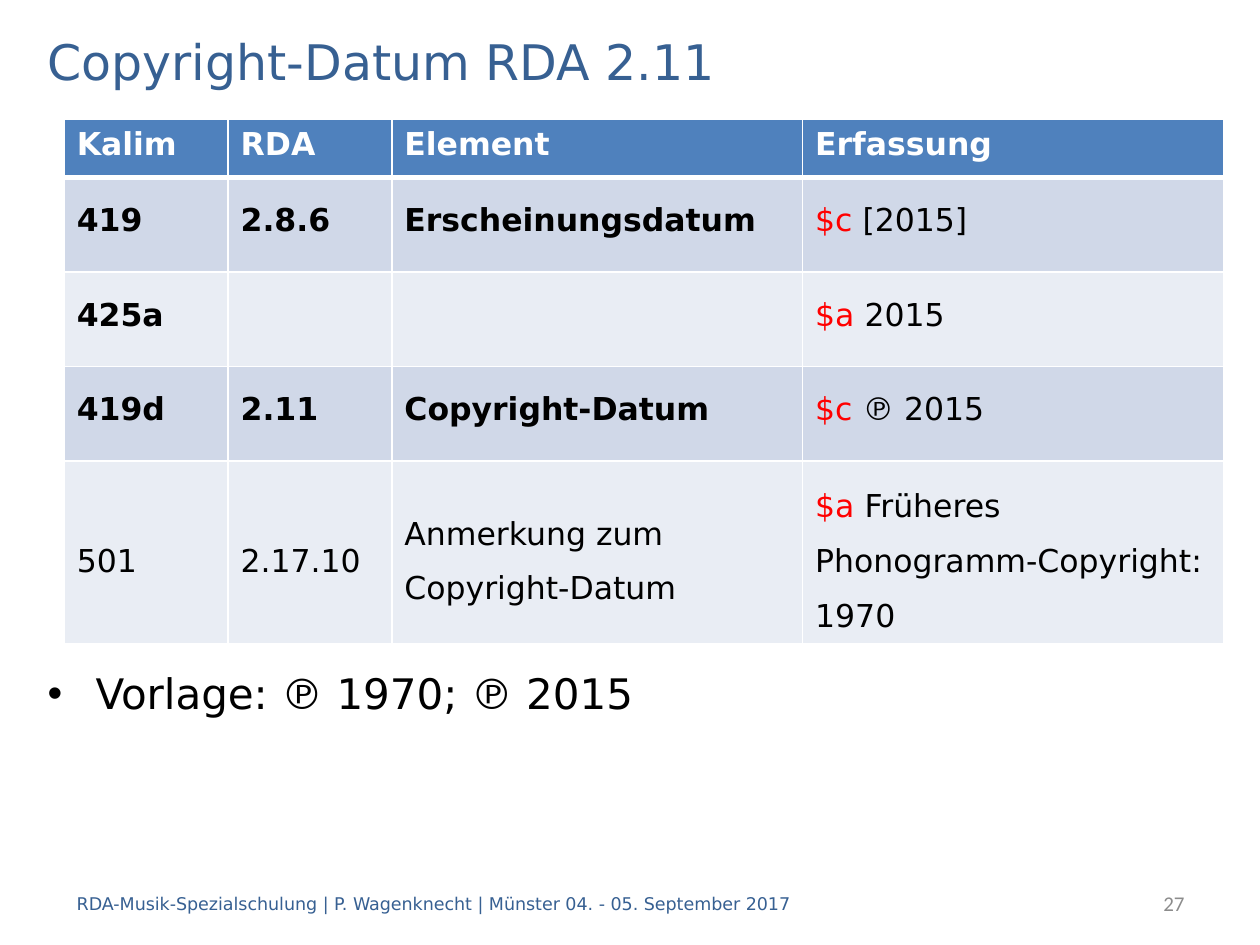
from dataclasses import dataclass

from lxml.etree import SubElement
from pptx import Presentation
from pptx.dml.color import RGBColor as Color
from pptx.enum.text import MSO_ANCHOR as Anchor, PP_ALIGN as Align
from pptx.oxml.ns import qn
from pptx.util import Inches, Pt


@dataclass(frozen=True)
class Theme:
    font: str = "DejaVu Sans"
    number_font: str = "Calibri"
    title_size: int = 28
    body_size: int = 24
    table_size: int = 18
    number_size: int = 12
    footer_size: int = 10
    heading: str = "376092"
    text: str = "000000"
    subfield: str = "FF0000"
    number: str = "8C8C8C"
    white: str = "FFFFFF"
    header_fill: str = "4F81BD"
    band_fills: tuple = ("D0D8E8", "E9EDF4")


THEME = Theme()


@dataclass(frozen=True)
class Label:
    text: str
    left: float
    top: float
    width: float
    height: float
    size: int
    color: str
    font: str = THEME.font
    align: Align = Align.LEFT
    anchor: Anchor = Anchor.MIDDLE
    bullet: bool = False


@dataclass(frozen=True)
class Field:
    tag: str
    rda: str
    element: str
    code: str
    value: str
    bold: bool = True
    spacing: object = Pt(16)


TITLE = Label("Copyright-Datum RDA 2.11", 0.28, 0.2, 9.45, 0.56,
              THEME.title_size, THEME.heading)
SOURCE = Label("Vorlage: ℗ 1970; ℗ 2015", 0.28, 5.25, 9.45, 1.34,
               THEME.body_size, THEME.text, anchor=Anchor.TOP, bullet=True)
FOOTER = Label("RDA-Musik-Spezialschulung | P. Wagenknecht | Münster 04. - 05. September 2017",
               0.51, 6.97, 8.35, 0.4, THEME.footer_size, THEME.heading)
NUMBER = Label("27", 7.91, 6.97, 1.59, 0.4, THEME.number_size, THEME.number,
               font=THEME.number_font, align=Align.RIGHT)

HEADERS = ("Kalim", "RDA", "Element", "Erfassung")
FIELDS = (
    Field("419", "2.8.6", "Erscheinungsdatum", "$c ", "[2015]"),
    Field("425a", "", "", "$a ", "2015"),
    Field("419d", "2.11", "Copyright-Datum", "$c ", "℗ 2015"),
    Field("501", "2.17.10", "Anmerkung zum Copyright-Datum",
          "$a ", "Früheres Phonogramm-Copyright: 1970", bold=False, spacing=1.5),
)
COLUMN_WIDTHS = (1.3, 1.3, 3.26, 3.34)
ROW_HEIGHTS = (0.46, 0.75, 0.75, 0.75, 0.75)


def set_font(font, name: str, size: int, color: str, bold: bool = False) -> None:
    font.name, font.size, font.bold = name, Pt(size), bold
    font.color.rgb = Color.from_string(color)


def add_bullet(para) -> None:
    properties = para._p.get_or_add_pPr()
    indent = Inches(0.38)
    properties.set("marL", str(indent))
    properties.set("indent", str(-indent))
    SubElement(properties, qn("a:buFont"), typeface="Arial")
    SubElement(properties, qn("a:buChar"), char="•")


def add_label(page, label: Label) -> None:
    box = page.shapes.add_textbox(Inches(label.left), Inches(label.top),
                                  Inches(label.width), Inches(label.height))
    frame = box.text_frame
    frame.word_wrap = True
    frame.vertical_anchor = label.anchor
    para = frame.paragraphs[0]
    para.alignment = label.align
    if label.bullet:
        para.space_before = Pt(0.2 * label.size)
        add_bullet(para)
    para.add_run().text = label.text
    set_font(para.font, label.font, label.size, label.color)


def style_cell(cell, fill: str, bottom_width: float = 1, top_width: float = 1) -> None:
    properties = cell._tc.get_or_add_tcPr()
    widths = {"lnL": 1, "lnR": 1, "lnT": top_width, "lnB": bottom_width}
    for side, width in widths.items():
        line = SubElement(properties, qn(f"a:{side}"), w=str(Pt(width)))
        solid = SubElement(line, qn("a:solidFill"))
        SubElement(solid, qn("a:srgbClr"), val=THEME.white)
    cell.fill.solid()
    cell.fill.fore_color.rgb = Color.from_string(fill)


def write_field(cells, field: Field) -> None:
    texts = (field.tag, field.rda, field.element, field.value)
    for cell, text in zip(cells, texts):
        cell.vertical_anchor = Anchor.MIDDLE
        para = cell.text_frame.paragraphs[0]
        para.line_spacing = field.spacing
        para.space_before = para.space_after = Pt(6)
        is_entry = text is field.value
        set_font(para.font, THEME.font, THEME.table_size, THEME.text,
                 field.bold and not is_entry)
        if is_entry:
            code = para.add_run()
            code.text = field.code
            code.font.color.rgb = Color.from_string(THEME.subfield)
        if text:
            para.add_run().text = text


def add_field_table(page) -> None:
    frame = page.shapes.add_table(len(ROW_HEIGHTS), len(COLUMN_WIDTHS),
                                  Inches(0.51), Inches(0.95),
                                  Inches(sum(COLUMN_WIDTHS)), Inches(sum(ROW_HEIGHTS)))
    table = frame.table
    for column, width in zip(table.columns, COLUMN_WIDTHS):
        column.width = Inches(width)
    for row, height in zip(table.rows, ROW_HEIGHTS):
        row.height = Inches(height)

    # Header row with a heavier rule below
    header, *body = table.rows
    for cell, text in zip(header.cells, HEADERS):
        style_cell(cell, THEME.header_fill, bottom_width=3)
        para = cell.text_frame.paragraphs[0]
        para.add_run().text = text
        set_font(para.font, THEME.font, THEME.table_size, THEME.white, bold=True)

    # Banded rows
    for index, (row, field) in enumerate(zip(body, FIELDS)):
        for cell in row.cells:
            style_cell(cell, THEME.band_fills[index % 2], top_width=1 if index else 3)
        write_field(row.cells, field)


def main() -> None:
    deck = Presentation()
    deck.slide_width, deck.slide_height = Inches(10), Inches(7.5)
    page = deck.slides.add_slide(deck.slide_layouts[6])
    for label in (TITLE, SOURCE, FOOTER, NUMBER):
        add_label(page, label)
    add_field_table(page)
    deck.save("out.pptx")


if __name__ == "__main__":
    main()
